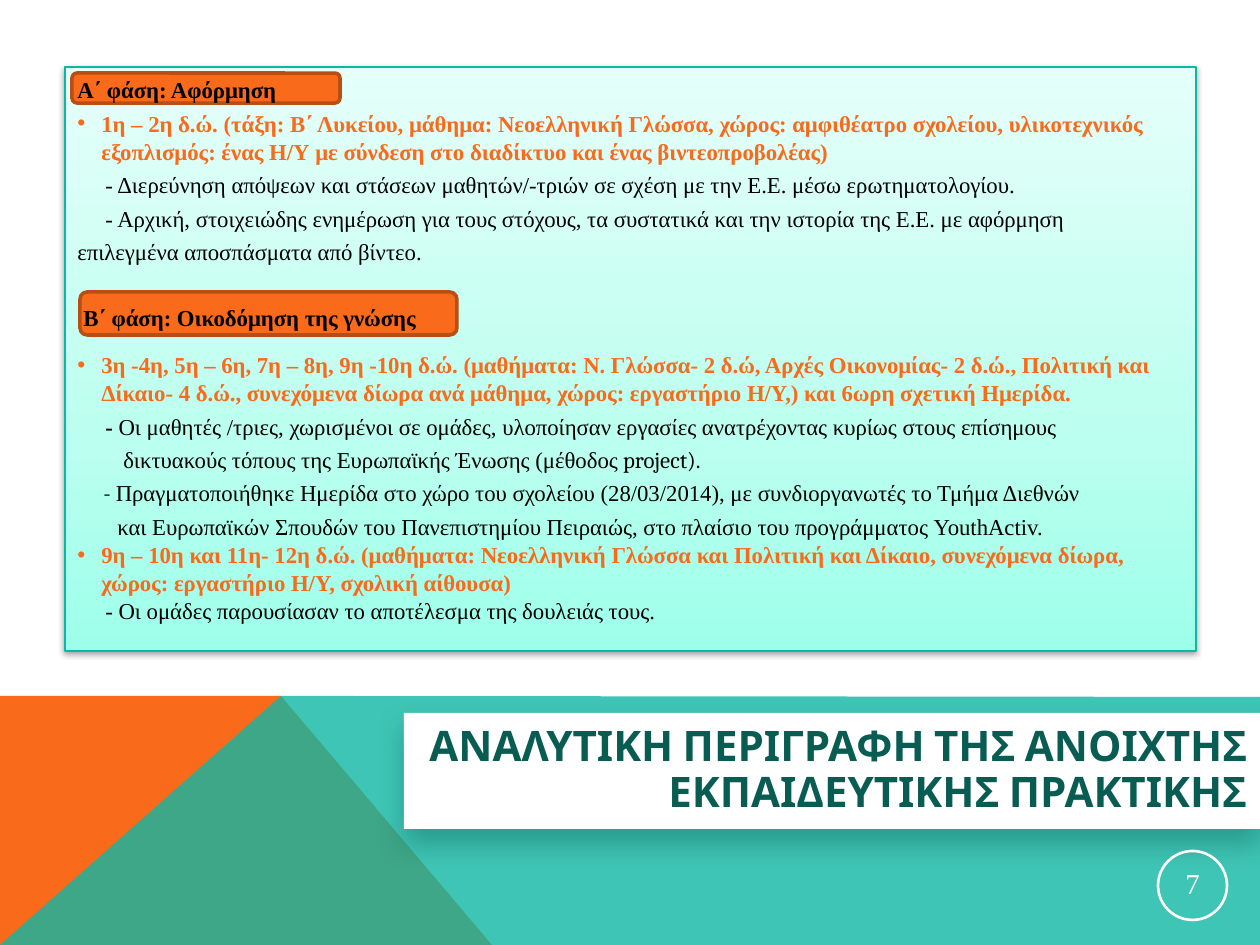
from lxml import etree
from pptx import Presentation, util as u
from pptx.dml.color import RGBColor
from pptx.enum import shapes, text
from pptx.oxml.ns import qn

PX = 914400 / 126
ORANGE = RGBColor(0xF9, 0x6A, 0x1B)
RUST = RGBColor(0xB8, 0x4E, 0x14)
TEAL = RGBColor(0x10, 0xB7, 0xA3)
EDGE = RGBColor(0x0C, 0xB7, 0xA3)
PINE = RGBColor(0x08, 0x5C, 0x52)
MINT = RGBColor(0x9D, 0xFF, 0xEA)
PALE = RGBColor(0xBA, 0xFF, 0xEF)
ICE = RGBColor(0xE5, 0xFF, 0xF9)
WHITE = RGBColor(0xFF, 0xFF, 0xFF)
BLACK = RGBColor(0, 0, 0)
SERIF = "Times New Roman"

HEAD = {"bold": True}
TASK = {"bold": True, "color": ORANGE}
NOTE = {"bold": False}
# format, space before (pt), first-line indent (px), runs (text, font)
LINES = [
    (HEAD, 0, 0, [("Α΄ φάση: Αφόρμηση", SERIF)]),
    (TASK, 3, 0, [("1η – 2η δ.ώ. (τάξη: Β΄ Λυκείου, μάθημα: Νεοελληνική Γλώσσα, χώρος: αμφιθέατρο σχολείου, "
                   "υλικοτεχνικός εξοπλισμός: ένας Η/Υ με σύνδεση στο διαδίκτυο και ένας βιντεοπροβολέας)", SERIF)]),
    (NOTE, 3, 28, [("- Διερεύνηση απόψεων και στάσεων μαθητών/-τριών σε σχέση με την Ε.E. "
                    "μέσω ερωτηματολογίου.", SERIF)]),
    (NOTE, 3, 28, [("- Αρχική, στοιχειώδης ενημέρωση για τους στόχους, τα συστατικά και την ιστορία "
                    "της Ε.Ε. με αφόρμηση", SERIF)]),
    (NOTE, 3, 0, [("επιλεγμένα αποσπάσματα από βίντεο.", SERIF)]),
    (HEAD, 21.5, 6, [("Β΄ φάση: Οικοδόμηση της γνώσης", SERIF)]),
    (TASK, 11, 0, [("3η -4η, 5η – 6η, 7η – 8η, 9η -10η δ.ώ. (μαθήματα: Ν. Γλώσσα- 2 δ.ώ, Αρχές Οικονομίας- 2 δ.ώ., "
                    "Πολιτική και Δίκαιο- 4 δ.ώ., συνεχόμενα δίωρα ανά μάθημα, χώρος: εργαστήριο Η/Υ,) "
                    "και 6ωρη σχετική Ημερίδα.", SERIF)]),
    (NOTE, 3, 28, [("- ", SERIF, True),
                   ("Οι μαθητές /τριες, χωρισμένοι σε ομάδες, υλοποίησαν εργασίες ανατρέχοντας "
                    "κυρίως στους επίσημους", SERIF)]),
    (NOTE, 3, 46, [("δικτυακούς τόπους της Ευρωπαϊκής Ένωσης (μέθοδος ", SERIF), ("project).", "Cambria")]),
    (NOTE, 3, 26, [("- ", "Cambria"),
                   ("Πραγματοποιήθηκε Ημερίδα στο χώρο του σχολείου (28/03/2014), με συνδιοργανωτές "
                    "το Τμήμα Διεθνών", SERIF)]),
    (NOTE, 3, 40, [("και Ευρωπαϊκών Σπουδών του Πανεπιστημίου Πειραιώς, στο πλαίσιο του προγράμματος "
                    "YouthActiv.", SERIF)]),
    (TASK, 0, 0, [("9η – 10η και 11η- 12η δ.ώ. (μαθήματα: Νεοελληνική Γλώσσα και Πολιτική και Δίκαιο, "
                   "συνεχόμενα δίωρα, χώρος: εργαστήριο Η/Υ, σχολική αίθουσα)", SERIF)]),
    (NOTE, 0, 28, [("- Οι ομάδες παρουσίασαν το αποτέλεσμα της δουλειάς τους.", SERIF)]),
]


def px(n):
    return u.Emu(round(n * PX))


def put(item, form):
    for key, val in form.items():
        if key == "color":
            item.color.rgb = val
        else:
            setattr(item, key, val)


def sub(node, tag, **attrs):
    return etree.SubElement(node, qn(tag), {k: str(v) for k, v in attrs.items()})


def paint(shape, fill=None, line=None, width=0):
    shape.shadow.inherit = False
    if fill is None:
        shape.fill.background()
    else:
        shape.fill.solid()
        shape.fill.fore_color.rgb = fill
    if line is None:
        shape.line.fill.background()
    else:
        shape.line.color.rgb = line
        shape.line.width = u.Pt(width)


def block(slide, kind, box, **look):
    shape = slide.shapes.add_shape(kind, *map(px, box))
    paint(shape, **look)
    return shape


def shade(shape, color, alpha, blur, dist):
    """Add a soft shadow straight below the shape; blur and dist in points."""
    list_ = shape._element.spPr.find(qn("a:effectLst"))
    drop = sub(list_, "a:outerShdw", blurRad=u.Pt(blur), dist=u.Pt(dist),
               dir=90 * 60000, algn="ctr", rotWithShape=0)
    sub(sub(drop, "a:srgbClr", val=color), "a:alpha", val=alpha * 1000)


def blend(shape, stops):
    """Fill the shape with colour stops that run from bottom to top."""
    shape.fill.gradient()
    grad = shape._element.spPr.find(qn("a:gradFill"))
    for child in list(grad):
        grad.remove(child)
    row = sub(grad, "a:gsLst")
    for pos, color in stops:
        sub(sub(row, "a:gs", pos=pos * 1000), "a:srgbClr", val=color)
    sub(grad, "a:lin", ang=270 * 60000, scaled=0)


def band(slide, box):
    """Draw the two-colour footer band."""
    x, y, w, h = box
    peak, foot = x + 281, x + 492

    def patch(points, fill):
        pen = slide.shapes.build_freeform(*points[0], scale=PX)
        pen.add_line_segments(points[1:], close=True)
        shape = pen.convert_to_shape()
        paint(shape, fill)
        return shape

    patch([(x, y + h), (x, y), (peak, y), (foot, y + h)], ORANGE)
    veil = patch([(x, y + h), (peak, y), (x + w, y + 1), (x + w, y + h)], TEAL)
    tint = veil._element.spPr.find(qn("a:solidFill"))[0]
    sub(tint, "a:alpha", val=80000)


def mark(para):
    """Give the paragraph an orange hanging bullet."""
    props = para._p.get_or_add_pPr()
    props.set("marL", str(px(24)))
    props.set("indent", str(-px(24)))
    sub(sub(props, "a:buClr"), "a:srgbClr", val=ORANGE)
    sub(props, "a:buFont", typeface="Arial")
    sub(props, "a:buChar", char="•")


def panel(slide, box):
    x, y, w, h = box
    base = block(slide, shapes.MSO_SHAPE.RECTANGLE, box, fill=ICE, line=EDGE, width=0.75)
    blend(base, [(0, MINT), (35, PALE), (100, ICE)])
    shade(base, BLACK, 38, 3.1, 1.6)
    for dx, dy, cw, ch in [(15, 225, 377, 43), (7, 6, 268, 30)]:
        block(slide, shapes.MSO_SHAPE.ROUNDED_RECTANGLE, (x + dx, y + dy, cw, ch),
              fill=ORANGE, line=RUST, width=2)
    frame = slide.shapes.add_textbox(px(x), px(y + 2), px(w + 1), px(h)).text_frame
    frame.word_wrap = True
    for i, (form, gap, dent, runs) in enumerate(LINES):
        para = frame.paragraphs[0] if i == 0 else frame.add_paragraph()
        put(para, {"line_spacing": 1.03, "space_before": u.Pt(gap)})
        if form is TASK:
            mark(para)
        elif dent:
            para._p.get_or_add_pPr().set("indent", str(px(dent)))
        for words, font, *bold in runs:
            run = para.add_run()
            run.text = words
            put(run.font, {"name": font, "size": u.Pt(13), "color": BLACK, **form})
            if bold:
                run.font.bold = True


def label(shape, words, align, inset, form):
    frame = shape.text_frame
    put(frame, {"word_wrap": True, "vertical_anchor": text.MSO_ANCHOR.MIDDLE, **inset})
    para = frame.paragraphs[0]
    put(para, {"alignment": align, "line_spacing": 0.9})
    run = para.add_run()
    run.text = words
    put(run.font, form)


def title(slide, box):
    plate = block(slide, shapes.MSO_SHAPE.RECTANGLE, box, fill=WHITE)
    shade(plate, PINE, 40, 16, 8)
    label(plate, "ΑΝΑΛΥΤΙΚΗ ΠΕΡΙΓΡΑΦΗ ΤΗΣ ΑΝΟΙΧΤΗΣ ΕΚΠΑΙΔΕΥΤΙΚΗΣ ΠΡΑΚΤΙΚΗΣ",
          text.PP_ALIGN.RIGHT, {},
          {"name": "Cabin", "size": u.Pt(24), "bold": True, "color": PINE})


def badge(slide, box):
    ring = block(slide, shapes.MSO_SHAPE.OVAL, box, line=WHITE, width=1.5)
    sides = ("left", "top", "right", "bottom")
    label(ring, "7", text.PP_ALIGN.CENTER, {f"margin_{s}": px(1) for s in sides},
          {"name": SERIF, "size": u.Pt(16.5), "color": WHITE})


def main():
    deck = Presentation()
    put(deck, {"slide_width": px(1260), "slide_height": px(945)})
    slide = deck.slides.add_slide(deck.slide_layouts[6])
    band(slide, (0, 696, 1260, 249))
    panel(slide, (65, 67, 1131, 584))
    title(slide, (404, 713, 856, 116))
    badge(slide, (1158, 851, 69, 69))
    deck.save("out.pptx")


if __name__ == "__main__":
    main()
